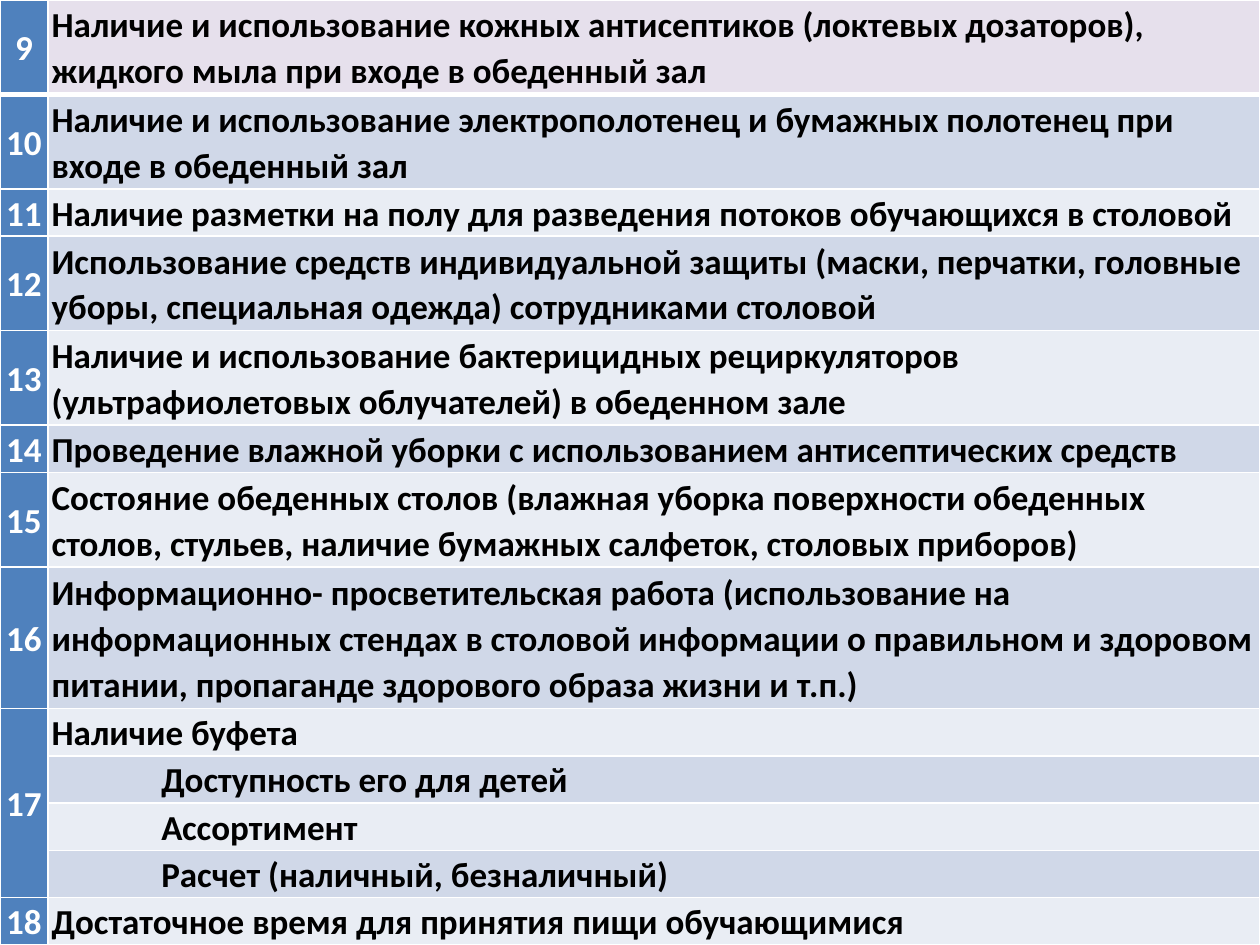
import pptx
import pptx.dml.color
import pptx.enum.text
import pptx.oxml.ns
import pptx.util
from lxml import etree
from pptx.util import Inches

NUMBER_FILL = "4F81BD"
FIRST_FILL = "E6E0EC"
BAND_FILLS = ["E9EDF4", "D0D8E8"]
NUMBER_WIDTH = Inches(0.38)
SUBITEM_INDENT = Inches(0.87)

# Each item: number, height in text lines, text, subitems of one line each
ITEMS = [
    ("9", 2, "Наличие и использование кожных антисептиков (локтевых дозаторов), "
             "жидкого мыла при входе в обеденный зал", []),
    ("10", 2, "Наличие и использование электрополотенец и бумажных полотенец "
              "при входе в обеденный зал", []),
    ("11", 1, "Наличие разметки на полу для разведения потоков обучающихся в столовой", []),
    ("12", 2, "Использование средств индивидуальной защиты (маски, перчатки, головные "
              "уборы, специальная одежда) сотрудниками столовой", []),
    ("13", 2, "Наличие и использование бактерицидных рециркуляторов "
              "(ультрафиолетовых облучателей) в обеденном зале", []),
    ("14", 1, "Проведение влажной уборки с использованием антисептических средств", []),
    ("15", 2, "Состояние обеденных столов (влажная уборка поверхности обеденных "
              "столов, стульев, наличие бумажных салфеток, столовых приборов)", []),
    ("16", 3, "Информационно- просветительская работа (использование на "
              "информационных стендах в столовой информации о правильном и здоровом "
              "питании, пропаганде здорового образа жизни и т.п.)", []),
    ("17", 1, "Наличие буфета",
     ["Доступность его для детей", "Ассортимент", "Расчет (наличный, безналичный)"]),
    ("18", 1, "Достаточное время для принятия пищи обучающимися", []),
]


def color(hex_string):
    return pptx.dml.color.RGBColor.from_string(hex_string)


def set_borders(cell, top=1, bottom=1):
    """Draw white borders; top and bottom are widths in points."""
    properties = cell._tc.get_or_add_tcPr()
    for side, width in [("L", 1), ("R", 1), ("T", top), ("B", bottom)]:
        line = etree.SubElement(properties, pptx.oxml.ns.qn(f"a:ln{side}"),
                                w=str(pptx.util.Pt(width)))
        fill = etree.SubElement(line, pptx.oxml.ns.qn("a:solidFill"))
        etree.SubElement(fill, pptx.oxml.ns.qn("a:srgbClr"), val="FFFFFF")


def style_cell(cell, row, fill):
    set_borders(cell, top=3 if row == 1 else 1, bottom=3 if row == 0 else 1)
    cell.fill.solid()
    cell.fill.fore_color.rgb = color(fill)
    cell.vertical_anchor = pptx.enum.text.MSO_ANCHOR.MIDDLE
    cell.margin_left = cell.margin_right = Inches(0.03)
    cell.margin_top = cell.margin_bottom = 0


def write_cell(cell, text, text_color, centered=False, indent=0):
    paragraph = cell.text_frame.paragraphs[0]
    paragraph.line_spacing = 1.07
    if centered:
        paragraph.alignment = pptx.enum.text.PP_ALIGN.CENTER
    if indent:
        paragraph._p.get_or_add_pPr().set("marL", str(indent))
    run = paragraph.add_run()
    run.text = text
    run.font.name = "Calibri"
    run.font.size = pptx.util.Pt(20)
    run.font.bold = True
    run.font.color.rgb = color(text_color)


def add_checklist(slide, left, top, width, height):
    """Fill the box with the numbered table, rows sized by their text lines."""
    rows = []
    for number, lines, text, subitems in ITEMS:
        rows.append((number, lines, text, 0, len(subitems)))
        rows += [("", 1, subitem, SUBITEM_INDENT, 0) for subitem in subitems]
    line_height = height / sum(row[1] for row in rows)

    table = slide.shapes.add_table(len(rows), 2, left, top, width, height).table
    table.columns[0].width = NUMBER_WIDTH
    table.columns[1].width = width - NUMBER_WIDTH
    for index, (number, lines, text, indent, subitem_count) in enumerate(rows):
        table.rows[index].height = int(lines * line_height)
        number_cell, text_cell = table.cell(index, 0), table.cell(index, 1)
        style_cell(number_cell, index, NUMBER_FILL)
        style_cell(text_cell, index, BAND_FILLS[index % 2] if index else FIRST_FILL)
        write_cell(text_cell, text, "000000", indent=indent)
        if number:
            write_cell(number_cell, number, "FFFFFF", centered=True)
        if subitem_count:
            number_cell.merge(table.cell(index + subitem_count, 0))


def main():
    presentation = pptx.Presentation()
    presentation.slide_width = Inches(10)
    presentation.slide_height = Inches(7.5)
    slide = presentation.slides.add_slide(presentation.slide_layouts[6])
    add_checklist(slide, 0, 0, Inches(10), Inches(7.5))
    presentation.save("out.pptx")


if __name__ == "__main__":
    main()
